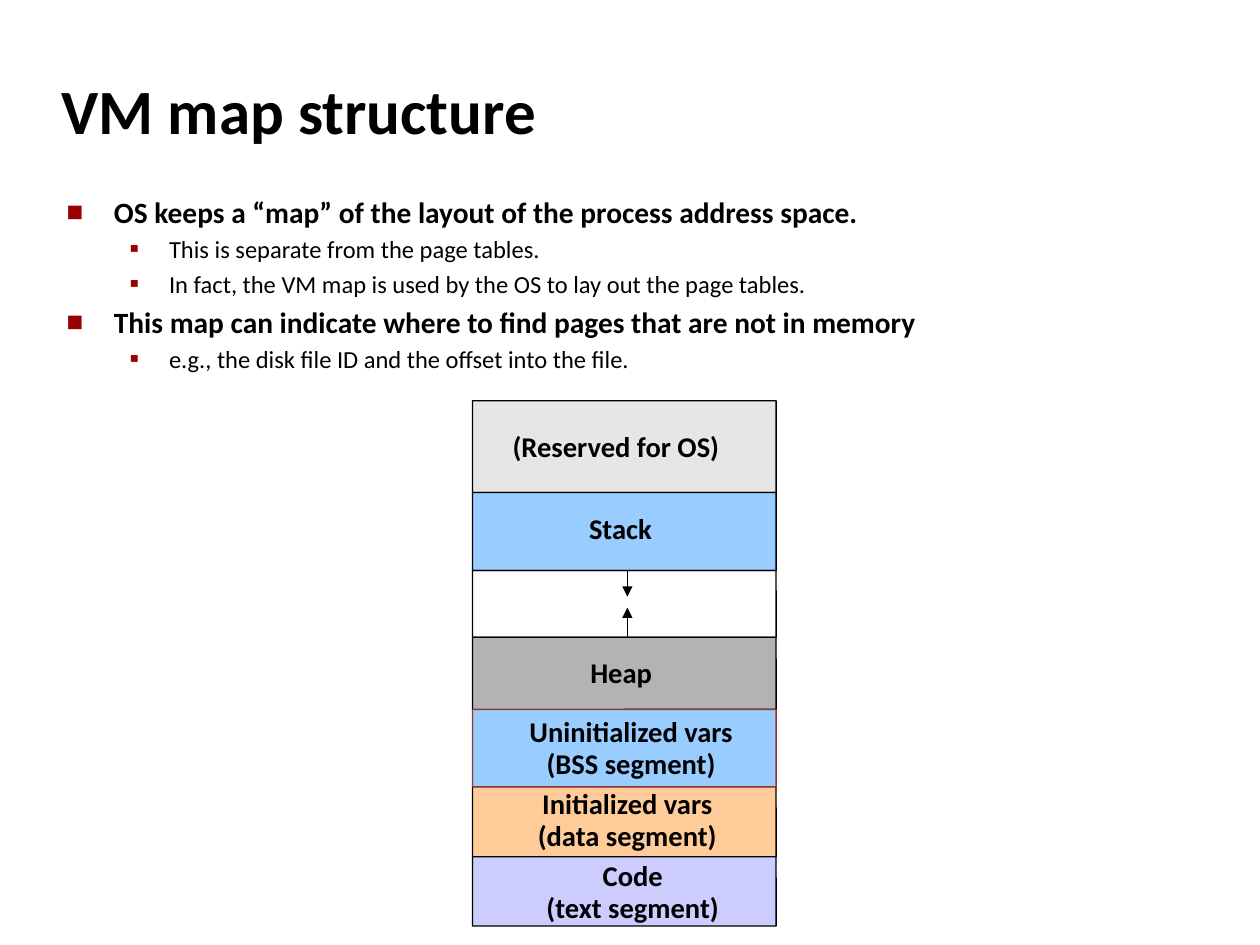
from dataclasses import dataclass

from lxml.etree import SubElement
from pptx import Presentation
from pptx.dml.color import RGBColor
from pptx.enum.shapes import MSO_CONNECTOR, MSO_SHAPE
from pptx.enum.text import MSO_ANCHOR, PP_ALIGN
from pptx.oxml.ns import qn
from pptx.util import Pt


@dataclass(frozen=True)
class Theme:
    font: str = "Calibri"
    ink: str = "000000"
    mark: str = "990000"
    edge: str = "993333"
    light: str = "E6E6E6"
    blue: str = "99CCFF"
    gray: str = "B3B3B3"
    peach: str = "FFCC99"
    lilac: str = "CCCCFF"
    title: float = 36
    head: float = 16.8
    sub: float = 14
    label: float = 16.3
    line: float = 0.75


THEME = Theme()
LEFT, WIDTH, TOP = 270, 173.5, 229

# Level: indent, hanging, type size, bold, bullet, bullet size
LEVELS = [
    (27, 27, THEME.head, True, "■", 60),
    (58.5, 22.5, THEME.sub, False, "▪", 110),
]

POINTS = [
    (0, "OS keeps a “map” of the layout of the process address space."),
    (1, "This is separate from the page tables."),
    (1, "In fact, the VM map is used by the OS to lay out the page tables."),
    (0, "This map can indicate where to find pages that are not in memory"),
    (1, "e.g., the disk file ID and the offset into the file."),
]

# Region, top down: height, fill, edge, label, label centre, label drop
PARTS = [
    (52.5, THEME.light, THEME.ink, "(Reserved for OS)", 352, 18),
    (44.5, THEME.blue, THEME.ink, "Stack", 354.6, 12.3),
    (38.2, None, THEME.ink, "", 0, 0),
    (41.2, THEME.gray, THEME.ink, "Heap", 355, 11.5),
    (44.2, THEME.blue, THEME.edge, "Uninitialized vars\n(BSS segment)", 360.7, 4.2),
    (40, THEME.peach, THEME.ink, "Initialized vars\n(data segment)", 358.5, 1.2),
    (39.6, THEME.lilac, THEME.ink, "Code\n(text segment)", 361.6, 2.2),
]


def color(code):
    return RGBColor.from_string(code)


def style(para, size, bold):
    for run in para.runs:
        font = run.font
        font.name, font.size, font.bold = THEME.font, Pt(size), bold
        font.color.rgb = color(THEME.ink)


def text_box(slide, x, y, w, h, pad=True):
    frame = slide.shapes.add_textbox(Pt(x), Pt(y), Pt(w), Pt(h)).text_frame
    frame.word_wrap = True
    if not pad:
        frame.margin_left = frame.margin_right = 0
        frame.margin_top = frame.margin_bottom = 0
    return frame


def add_title(slide, text):
    frame = text_box(slide, 28, 34.5, 597.5, 60)
    frame.vertical_anchor = MSO_ANCHOR.MIDDLE
    frame.text = text
    para = frame.paragraphs[0]
    para.line_spacing = 0.94
    style(para, THEME.title, True)


def add_bullet(para, level):
    indent, hang, size, bold, char, scale = LEVELS[level]
    para.level = level
    para.space_before = Pt(size * 0.2)
    style(para, size, bold)
    props = para._p.get_or_add_pPr()
    props.set("marL", str(Pt(indent)))
    props.set("indent", str(-Pt(hang)))
    tint = SubElement(props, qn("a:buClr"))
    SubElement(tint, qn("a:srgbClr"), val=THEME.mark)
    SubElement(props, qn("a:buSzPct"), val=str(scale * 1000))
    SubElement(props, qn("a:buFont"), typeface=THEME.font)
    SubElement(props, qn("a:buChar"), char=char)


def add_points(slide):
    frame = text_box(slide, 31, 107.3, 622, 116.6)
    frame.text = "\n".join(text for _, text in POINTS)
    for para, (level, _) in zip(frame.paragraphs, POINTS):
        add_bullet(para, level)


def add_block(slide, y, h, fill, edge):
    block = slide.shapes.add_shape(
        MSO_SHAPE.ROUNDED_RECTANGLE, Pt(LEFT), Pt(y), Pt(WIDTH), Pt(h))
    block.adjustments[0] = 0.003
    block.shadow.inherit = False
    if fill:
        block.fill.solid()
        block.fill.fore_color.rgb = color(fill)
    else:
        block.fill.background()
    block.line.color.rgb = color(edge)
    block.line.width = Pt(THEME.line)


def add_label(slide, text, mid, y):
    wide = 138
    high = 19 * len(text.split("\n"))
    frame = text_box(slide, mid - wide / 2, y, wide, high, pad=False)
    frame.text = text
    for para in frame.paragraphs:
        para.alignment = PP_ALIGN.CENTER
        para.line_spacing = 0.94
        style(para, THEME.label, True)


def add_arrow(slide, x, start, end):
    arrow = slide.shapes.add_connector(
        MSO_CONNECTOR.STRAIGHT, Pt(x), Pt(start), Pt(x), Pt(end))
    arrow.line.color.rgb = color(THEME.ink)
    arrow.line.width = Pt(THEME.line)
    SubElement(arrow.line._get_or_add_ln(), qn("a:tailEnd"), type="triangle")
    SubElement(arrow._element.spPr, qn("a:effectLst"))


def add_map(slide):
    tops = [TOP + sum(part[0] for part in PARTS[:i]) for i in range(len(PARTS))]
    rows = list(zip(tops, PARTS))
    # Blocks with a coloured edge go on top of their neighbours
    for y, (h, fill, edge, *_) in sorted(rows, key=lambda row: row[1][2] != THEME.ink):
        add_block(slide, y, h, fill, edge)
    for y, (*_, text, mid, drop) in rows:
        if text:
            add_label(slide, text, mid, y + drop)
    # Stack grows down, heap grows up
    add_arrow(slide, 358.5, tops[2], tops[2] + 15)
    add_arrow(slide, 358.5, tops[3], tops[3] - 17)


def main():
    deck = Presentation()
    deck.slide_width, deck.slide_height = Pt(720), Pt(540)
    slide = deck.slides.add_slide(deck.slide_layouts[6])
    add_title(slide, "VM map structure")
    add_points(slide)
    add_map(slide)
    deck.save("out.pptx")


if __name__ == "__main__":
    main()
